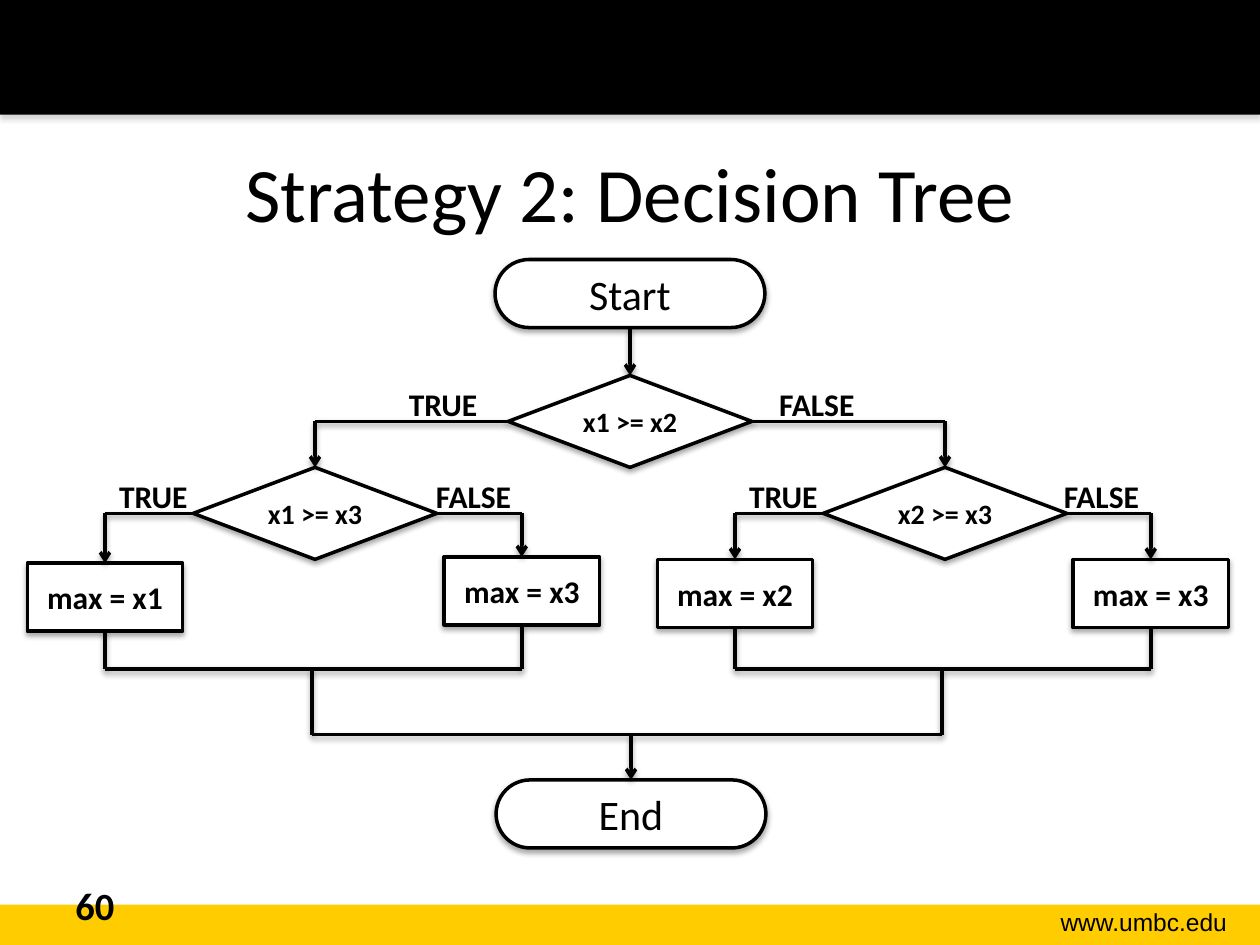
import lxml.etree
import pptx
import pptx.dml.color
import pptx.enum.shapes
import pptx.enum.text
import pptx.oxml
import pptx.oxml.ns
import pptx.util

BLACK = pptx.dml.color.RGBColor(0, 0, 0)
WHITE = pptx.dml.color.RGBColor(255, 255, 255)
GOLD = pptx.dml.color.RGBColor(255, 204, 0)
SHAPES = pptx.enum.shapes.MSO_SHAPE
ALIGN = pptx.enum.text.PP_ALIGN
MIDDLE = pptx.enum.text.MSO_ANCHOR.MIDDLE
TOP, LEFT, BOTTOM, RIGHT = range(4)

presentation = pptx.Presentation()
presentation.slide_width = pptx.util.Inches(10)
presentation.slide_height = pptx.util.Inches(7.5)
slide = presentation.slides.add_slide(presentation.slide_layouts[5])

# Grid of 12 columns by 75 rows
COLUMN = presentation.slide_width / 12
ROW = presentation.slide_height / 75
shadowed = []


def add_box(kind, center, top, width, height, text="", size=18, bold=True, fill=WHITE):
    """Add a shape, or a text box when kind is None, centred on a column."""
    frame = [round(n) for n in ((center - width / 2) * COLUMN, top * ROW,
                                width * COLUMN, height * ROW)]
    if kind is None:
        shape = slide.shapes.add_textbox(*frame)
    else:
        shape = slide.shapes.add_shape(kind, *frame)
        shape.fill.solid()
        shape.fill.fore_color.rgb = fill
        shape.line.color.rgb = BLACK
        shape.line.width = pptx.util.Pt(2)
        shape.text_frame.vertical_anchor = MIDDLE
        shape.text_frame.margin_left = shape.text_frame.margin_right = 0
        shadowed.append(shape)
    shape.text_frame.word_wrap = kind is None
    if text:
        paragraph = shape.text_frame.paragraphs[0]
        paragraph.text = text
        paragraph.alignment = ALIGN.CENTER
        paragraph.font.name = "Calibri"
        paragraph.font.size = pptx.util.Pt(size)
        paragraph.font.bold = bold
        paragraph.font.color.rgb = BLACK
    return shape


def add_line(start, end, arrow=False):
    """Join two ends, each (column, row) or (shape, side)."""
    points = [(0, 0) if hasattr(item, "shape_id") else
              (round(item * COLUMN), round(place * ROW)) for item, place in (start, end)]
    line = slide.shapes.add_connector(pptx.enum.shapes.MSO_CONNECTOR.STRAIGHT,
                                      *points[0], *points[1])
    for (item, side), join in ((start, line.begin_connect), (end, line.end_connect)):
        if hasattr(item, "shape_id"):
            join(item, side)
    line.line.color.rgb = BLACK
    line.line.width = pptx.util.Pt(2)
    if arrow:
        tail = lxml.etree.SubElement(line.line._get_or_add_ln(), pptx.oxml.ns.qn("a:tailEnd"))
        tail.set("type", "arrow")
    shadowed.append(line)


# Bars and footer
footer_bar = add_box(SHAPES.RECTANGLE, 6, 71.8, 12, 3.2, fill=GOLD)
footer_bar.line.fill.background()
footer_bar.shadow.inherit = False
shadowed.remove(footer_bar)
header_bar = add_box(SHAPES.RECTANGLE, 6, 0, 12, 9.1, fill=BLACK)
header_bar.line.fill.background()
address = add_box(None, 10.61, 71.5, 2.39, 3.4, "www.umbc.edu", 14, False)
address.text_frame.paragraphs[0].alignment = ALIGN.RIGHT
address.text_frame.paragraphs[0].font.name = "Arial"
page_number = add_box(None, 2, 69.5, 2.8, 4, "60", 22)
page_number.text_frame.paragraphs[0].alignment = ALIGN.LEFT

# Title
title = slide.shapes.title
title.left, title.top = round(0.6 * COLUMN), round(9 * ROW)
title.width, title.height = round(10.8 * COLUMN), round(12.5 * ROW)
title.text_frame.text = "Strategy 2: Decision Tree"
title.text_frame.vertical_anchor = MIDDLE
paragraph = title.text_frame.paragraphs[0]
paragraph.alignment = ALIGN.CENTER
paragraph.font.name = "Calibri"
paragraph.font.size = pptx.util.Pt(44)
paragraph.font.color.rgb = BLACK

# Branch labels
for text, center, top in (("TRUE", 4.22, 30.1), ("FALSE", 7.78, 30.1),
                          ("TRUE", 1.46, 37.4), ("FALSE", 4.51, 37.4),
                          ("TRUE", 7.46, 37.4), ("FALSE", 10.49, 37.4)):
    add_box(None, center, top, 1.49, 4, text)

# Start, end and decisions
start, end = [add_box(SHAPES.ROUNDED_RECTANGLE, center, top, 2.57, 5.4, text, 24, False)
              for text, center, top in (("Start", 6, 20.6), ("End", 6.01, 61.9))]
for terminator in (start, end):
    terminator.adjustments[0] = 0.5
root, left_test, right_test = [
    add_box(SHAPES.FLOWCHART_DECISION, center, top, 2.32, 7.3, text, 16)
    for text, center, top in (("x1 >= x2", 6, 29.8), ("x1 >= x3", 3, 37.1),
                              ("x2 >= x3", 9, 37.1))]
add_line((start, BOTTOM), (root, TOP), arrow=True)
for side, center, test in ((LEFT, 3, left_test), (RIGHT, 9, right_test)):
    add_line((root, side), (center, 33.45))
    add_line((center, 33.45), (test, TOP), arrow=True)

# Results, each led in from its decision and out to the merge line
MERGE, JOIN = 53.1, 58.3
for test, side, center, top, text in ((left_test, LEFT, 1, 44.7, "max = x1"),
                                      (left_test, RIGHT, 4.97, 44.2, "max = x3"),
                                      (right_test, LEFT, 7, 44.4, "max = x2"),
                                      (right_test, RIGHT, 10.96, 44.4, "max = x3")):
    result = add_box(SHAPES.RECTANGLE, center, top, 1.48, 5.4, text)
    add_line((test, side), (center, 40.75))
    add_line((center, 40.75), (result, TOP), arrow=True)
    add_line((result, BOTTOM), (center, MERGE))

# Merge lines down to the end
for first, last, middle in ((1, 4.97, 2.97), (7, 10.96, 8.97)):
    add_line((first, MERGE), (last, MERGE))
    add_line((middle, MERGE), (middle, JOIN))
add_line((2.97, JOIN), (8.97, JOIN))
add_line((6.01, JOIN), (end, TOP), arrow=True)

# Soft shadow below every outline and line
for shape in shadowed:
    color = "808080" if shape is header_bar else "000000"
    shape._element.spPr.append(pptx.oxml.parse_xml(
        f'<a:effectLst {pptx.oxml.ns.nsdecls("a")}>'
        '<a:outerShdw blurRad="40000" dist="23000" dir="5400000" rotWithShape="0">'
        f'<a:srgbClr val="{color}"><a:alpha val="35000"/></a:srgbClr>'
        '</a:outerShdw></a:effectLst>'))

presentation.save("out.pptx")
